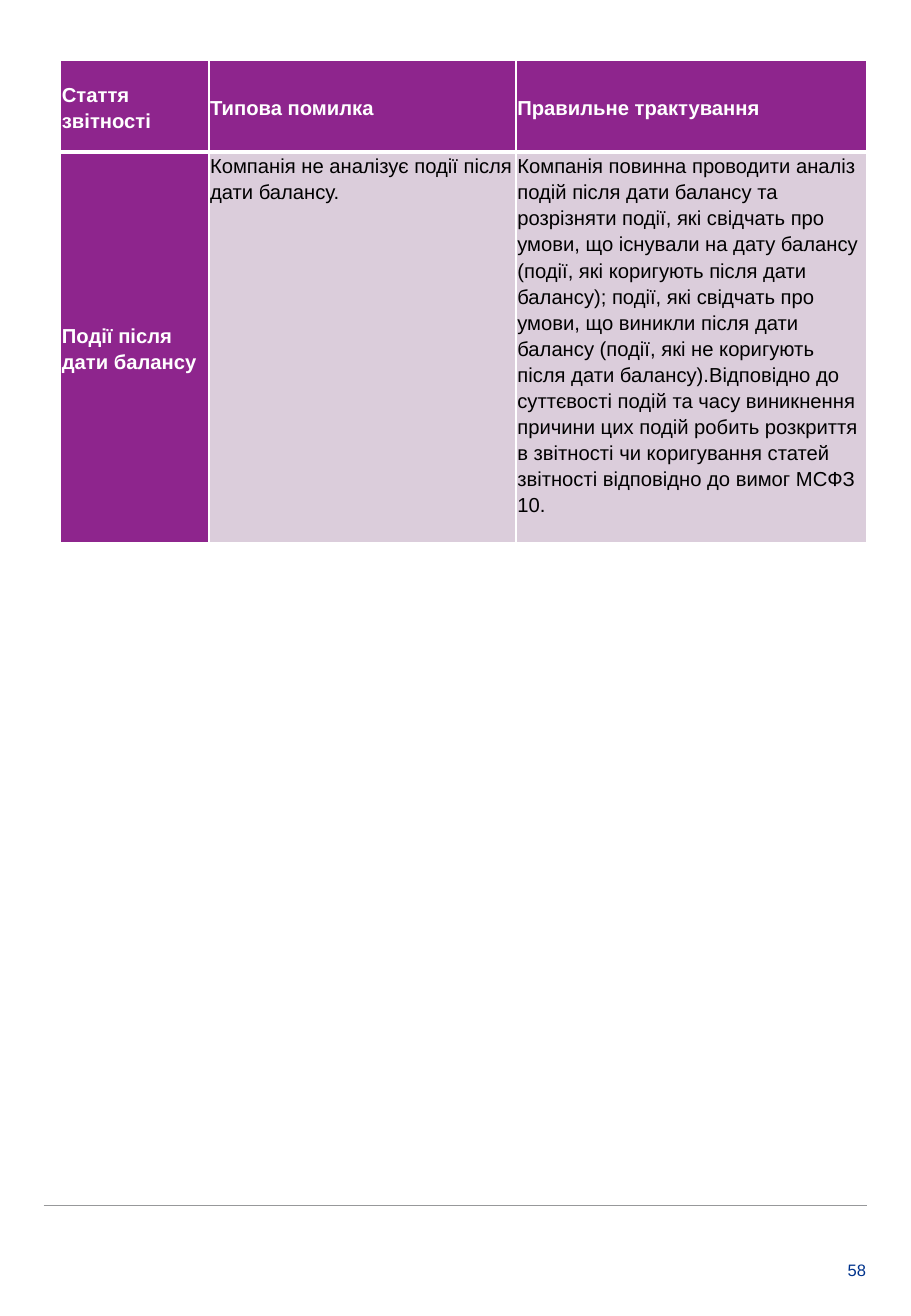
import pptx
import pptx.util
import pptx.dml.color
import pptx.enum.shapes
import pptx.enum.text
import pptx.oxml
import lxml.etree

inch = pptx.util.Inches
pt = pptx.util.Pt
align = pptx.enum.text.PP_ALIGN
anchor = pptx.enum.text.MSO_ANCHOR
DRAWING = "http://schemas.openxmlformats.org/drawingml/2006/main"


def color(hex_value):
    return pptx.dml.color.RGBColor.from_string(hex_value)


def style_text(paragraph, size, hex_value, bold=False):
    font = paragraph.runs[0].font
    font.name = "Arial"
    font.size = pt(size)
    font.bold = bold
    font.color.rgb = color(hex_value)


deck = pptx.Presentation()
deck.slide_width = inch(7.5)
deck.slide_height = inch(10.83)
page = deck.slides.add_slide(deck.slide_layouts[6])
right_edge = 7.14

footer_rule = page.shapes.add_connector(
    pptx.enum.shapes.MSO_CONNECTOR.STRAIGHT,
    inch(0.36), inch(9.92), inch(right_edge), inch(9.92))
footer_rule.line.color.rgb = color("97989A")
footer_rule.line.width = pt(0.25)
lxml.etree.SubElement(footer_rule._element.spPr, f"{{{DRAWING}}}effectLst")

page_number = page.shapes.add_textbox(inch(6.58), inch(10.28), inch(0.55), inch(0.26)).text_frame
page_number.word_wrap = True
page_number.margin_left = page_number.margin_top = inch(0.09)
page_number.margin_right = page_number.margin_bottom = 0
page_number.text = "58"
page_number.paragraphs[0].alignment = align.RIGHT
style_text(page_number.paragraphs[0], 9.8, "00338D")

column_widths = [1.22, 2.53, 2.89]
row_heights = [0.75, 3]
errors = [
    ["Стаття звітності", "Типова помилка", "Правильне трактування"],
    [
        "Події після дати балансу",
        "Компанія не аналізує події після дати балансу.",
        "Компанія повинна проводити аналіз подій після дати балансу та розрізняти події, "
        "які свідчать про умови, що існували на дату балансу (події, які коригують після "
        "дати балансу); події, які свідчать про умови, що виникли після дати балансу "
        "(події, які не коригують після дати балансу).Відповідно до суттєвості подій та "
        "часу виникнення причини цих подій робить розкриття в звітності чи коригування "
        "статей звітності відповідно до вимог МСФЗ 10.",
    ],
]

error_table = page.shapes.add_table(
    len(row_heights), len(column_widths), inch(0.5), inch(0.5),
    inch(sum(column_widths)), inch(sum(row_heights))).table
error_table.first_row = False
error_table.horz_banding = False
for column, width in zip(error_table.columns, column_widths):
    column.width = inch(width)

for row_index, (row, height) in enumerate(zip(error_table.rows, row_heights)):
    row.height = inch(height)
    for column_index, cell in enumerate(row.cells):
        heading = row_index == 0 or column_index == 0
        cell.text_frame.text = errors[row_index][column_index]
        cell.margin_left = cell.margin_right = inch(0.01)
        cell.margin_top = cell.margin_bottom = 0
        cell.vertical_anchor = anchor.MIDDLE if heading else anchor.TOP
        paragraph = cell.text_frame.paragraphs[0]
        paragraph.line_spacing = 1.15
        style_text(paragraph, 12, "FFFFFF" if heading else "000000", heading)
        cell.fill.solid()
        cell.fill.fore_color.rgb = color("8E258D" if heading else "DBCDDB")
        heavy_side = "B" if row_index == 0 else "T"
        for position, side in enumerate("LRTB"):
            border = pptx.oxml.parse_xml(
                f'<a:ln{side} xmlns:a="{DRAWING}" w="{pt(3 if side == heavy_side else 1)}">'
                f'<a:solidFill><a:srgbClr val="FFFFFF"/></a:solidFill></a:ln{side}>')
            cell._tc.tcPr.insert(position, border)

deck.save("out.pptx")
